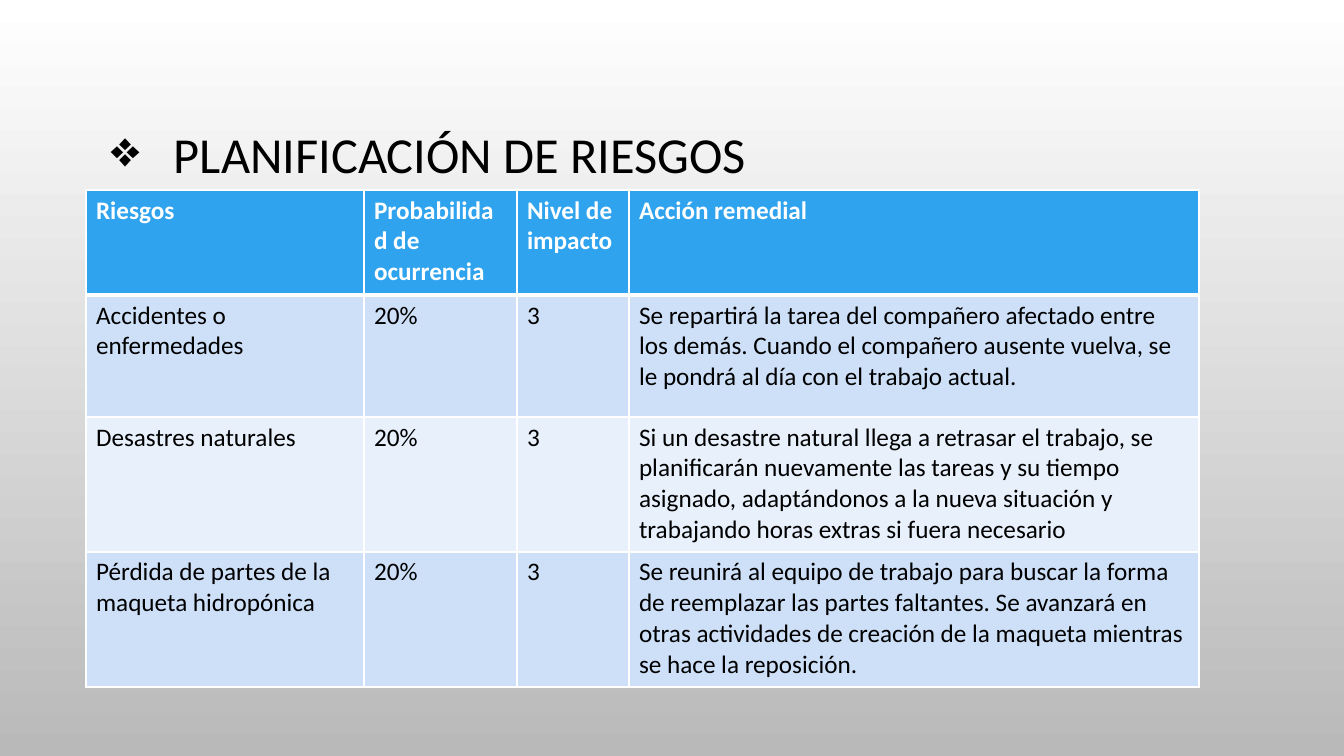
import pptx
import pptx.dml.color
import pptx.enum.text
import pptx.oxml
import pptx.oxml.ns
import pptx.util

EMU_PER_PX = 12192000 / 1344
COLOURS = {
    "top": "FFFFFF",
    "bottom": "B9B9B9",
    "ink": "000000",
    "white": "FFFFFF",
    "header": "2FA3EE",
    "odd": "CDE0F8",
    "even": "E8F0FC",
}
COLUMN_WIDTHS = [278, 153, 112, 570]
ROW_HEIGHTS = [105, 122, 135, 135]
RISKS = [
    ["Riesgos", "Probabilidad de ocurrencia", "Nivel de impacto", "Acción remedial"],
    ["Accidentes o enfermedades", "20%", "3",
     "Se repartirá la tarea del compañero afectado entre los demás. "
     "Cuando el compañero ausente vuelva, se le pondrá al día con el trabajo actual."],
    ["Desastres naturales", "20%", "3",
     "Si un desastre natural llega a retrasar el trabajo, se planificarán nuevamente "
     "las tareas y su tiempo asignado, adaptándonos a la nueva situación y "
     "trabajando horas extras si fuera necesario"],
    ["Pérdida de partes de la maqueta hidropónica", "20%", "3",
     "Se reunirá al equipo de trabajo para buscar la forma de reemplazar las partes "
     "faltantes. Se avanzará en otras actividades de creación de la maqueta mientras "
     "se hace la reposición."],
]


def px(length):
    """Turn pixels into EMU."""
    return pptx.util.Emu(round(length * EMU_PER_PX))


def rgb(name):
    """Return a named colour."""
    return pptx.dml.color.RGBColor.from_string(COLOURS[name])


def element(xml):
    """Build a drawing element from a tag and its content."""
    return pptx.oxml.parse_xml(xml.replace(" ", f" {pptx.oxml.ns.nsdecls('a')} ", 1))


def apply(target, values):
    """Set every attribute named in the dict."""
    for name, value in values.items():
        setattr(target, name, value)


def write(para, text, size, colour, bold=False):
    """Add one formatted run to a paragraph."""
    span = para.add_run()
    span.text = text
    apply(span.font, {"name": "Calibri", "size": pptx.util.Pt(size), "bold": bold})
    span.font.color.rgb = rgb(colour)


def paint_background(page):
    """Fill the page with a vertical gradient."""
    fill = page.background.fill
    fill.gradient()
    fill.gradient_angle = 270
    for stop, position, colour in zip(fill.gradient_stops, (0, 1), ("top", "bottom")):
        stop.position = position
        stop.color.rgb = rgb(colour)


def add_title(page, text):
    """Add the bulleted heading."""
    box = page.shapes.add_textbox(px(101), px(69), px(1142), px(176))
    apply(box.text_frame, {
        "word_wrap": True,
        "vertical_anchor": pptx.enum.text.MSO_ANCHOR.MIDDLE,
    })
    para = box.text_frame.paragraphs[0]
    properties = para._p.get_or_add_pPr()
    properties.set("marL", str(px(63)))
    properties.set("indent", str(-px(63)))
    properties.append(element('<a:buChar char="❖"/>'))
    para.line_spacing = 0.9
    write(para, text, 36, "ink")


def add_borders(cell, widths):
    """Draw white borders with a width in points for each side."""
    properties = cell._tc.get_or_add_tcPr()
    for side, width in widths.items():
        properties.append(element(
            f'<a:ln{side} w="{pptx.util.Pt(width)}"><a:solidFill>'
            f'<a:srgbClr val="{COLOURS["white"]}"/></a:solidFill></a:ln{side}>'))


def add_risk_table(page, rows):
    """Add the table of risks with its header and banded rows."""
    frame = page.shapes.add_table(
        len(rows), len(COLUMN_WIDTHS), px(86), px(190),
        px(sum(COLUMN_WIDTHS)), px(sum(ROW_HEIGHTS)))
    table = frame.table
    for column, width in zip(table.columns, COLUMN_WIDTHS):
        column.width = px(width)
    for row, height in zip(table.rows, ROW_HEIGHTS):
        row.height = px(height)
    for row_index, row in enumerate(rows):
        is_header = row_index == 0
        fill = "header" if is_header else ("even", "odd")[row_index % 2]
        borders = {"L": 1, "R": 1, "T": 3 if row_index == 1 else 1, "B": 3 if is_header else 1}
        for column_index, text in enumerate(row):
            cell = table.cell(row_index, column_index)
            add_borders(cell, borders)
            cell.fill.solid()
            cell.fill.fore_color.rgb = rgb(fill)
            write(cell.text_frame.paragraphs[0], text, 18,
                  "white" if is_header else "ink", is_header)


def main():
    """Build and save the deck."""
    deck = pptx.Presentation()
    apply(deck, {"slide_width": px(1344), "slide_height": px(756)})
    page = deck.slides.add_slide(deck.slide_layouts[6])
    paint_background(page)
    add_title(page, "PLANIFICACIÓN DE RIESGOS")
    add_risk_table(page, RISKS)
    deck.save("out.pptx")


if __name__ == "__main__":
    main()
